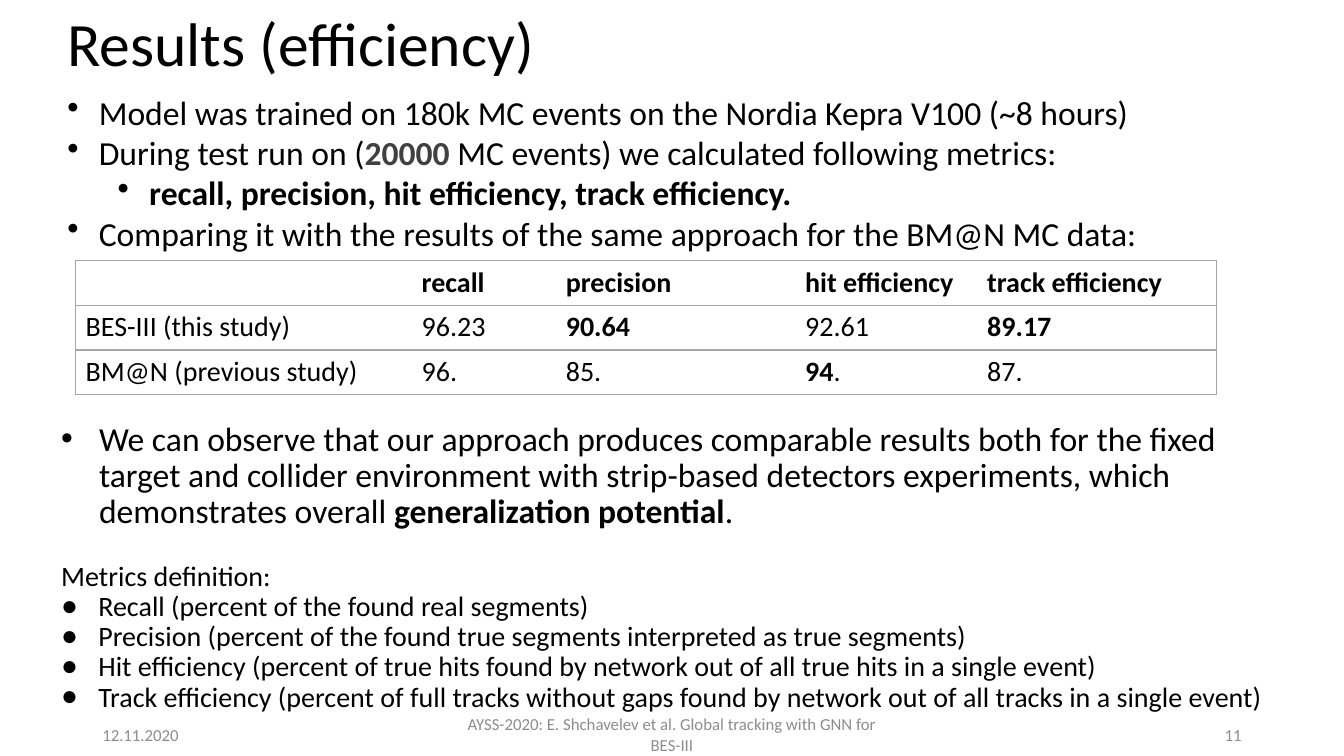
from pptx import Presentation
from pptx.dml.color import RGBColor
from pptx.enum.text import MSO_ANCHOR as Anchor, MSO_AUTO_SIZE as AutoSize, PP_ALIGN as Align
from pptx.oxml.ns import qn
from pptx.util import Pt
from lxml.etree import SubElement

BLACK, DARK, GRAY, LINE, WHITE = "000000", "404040", "8C8C8C", "A5A5A5", "FFFFFF"

METRICS = [
    "Recall (percent of the found real segments)",
    "Precision (percent of the found true segments interpreted as true segments)",
    "Hit efficiency (percent of true hits found by network out of all true hits in a single event)",
    "Track efficiency (percent of full tracks without gaps found by network out of all tracks in a single event)",
]
# A cell is its text, or a list of (text, bold) runs.
RESULTS = [
    ["", [("recall", True)], [("precision", True)], [("hit efficiency", True)],
     [("track efficiency", True)]],
    ["BES-III (this study)", "96.23", [("90.64", True)], "92.61", [("89.17", True)]],
    ["BM@N (previous study)", "96.", "85.", [("94", True), (".", False)], "87."],
]
COLUMNS = [240, 103, 171, 130, 171]
ROW_HEIGHT = 32


def rgb(value):
    return RGBColor.from_string(value)


def add_run(p, text, size=24, color=BLACK, bold=False):
    r = p.add_run()
    r.text = text
    r.font.name = "Calibri"
    r.font.size = Pt(size)
    r.font.bold = bold
    r.font.color.rgb = rgb(color)


def set_bullet(p, char, left, hang):
    """Indent the paragraph and give it a bullet, or none if char is empty."""
    pPr = p._p.get_or_add_pPr()
    pPr.set("marL", str(Pt(left)))
    pPr.set("indent", str(Pt(-hang)))
    if char:
        SubElement(pPr, qn("a:buChar")).set("char", char)
    else:
        SubElement(pPr, qn("a:buNone"))


def add_paragraph(tf, text="", bullet="", left=0, hang=0, spacing=1.0, before=0,
                  level=0, align=Align.LEFT, **font):
    first = tf.paragraphs[0]
    p = tf.add_paragraph() if first.runs else first
    p.level = level
    set_bullet(p, bullet, left, hang)
    p.line_spacing = spacing
    p.space_before = Pt(before)
    p.space_after = Pt(0)
    p.alignment = align
    if text:
        add_run(p, text, **font)
    return p


def place(sp, left, top, width, height, anchor=Anchor.TOP):
    sp.left, sp.top, sp.width, sp.height = Pt(left), Pt(top), Pt(width), Pt(height)
    tf = sp.text_frame
    tf.word_wrap = True
    tf.auto_size = AutoSize.NONE
    tf.vertical_anchor = anchor
    return tf


def add_text_box(s, left, top, width, height, anchor=Anchor.TOP):
    return place(s.shapes.add_textbox(0, 0, 0, 0), left, top, width, height, anchor)


def add_setup(s):
    tf = add_text_box(s, 41, 62, 852, 124)
    item = {"bullet": "•", "left": 22.5, "hang": 22.5}
    add_paragraph(tf, "Model was trained on 180k MC events on the Nordia Kepra V100 (~8 hours)", **item)
    p = add_paragraph(tf, "During test run on (", **item)
    add_run(p, "20000", color=DARK, bold=True)
    add_run(p, " MC events) we calculated following metrics:")
    add_paragraph(tf, "recall, precision, hit efficiency, track efficiency.",
                  bullet="•", left=58.5, hang=22.5, level=1, bold=True)
    add_paragraph(tf, "Comparing it with the results of the same approach for the BM@N MC data:", **item)


def set_border(cell, side, color=None):
    ln = SubElement(cell._tc.get_or_add_tcPr(), qn(f"a:ln{side}"), w=str(Pt(1)))
    if color:
        fill = SubElement(ln, qn("a:solidFill"))
        SubElement(fill, qn("a:srgbClr"), val=color)
    else:
        SubElement(ln, qn("a:noFill"))


def add_results_table(s):
    last = len(COLUMNS) - 1
    table = s.shapes.add_table(len(RESULTS), len(COLUMNS), Pt(54), Pt(186),
                               Pt(sum(COLUMNS)), Pt(ROW_HEIGHT * len(RESULTS))).table
    table.first_row = table.horz_banding = False
    for column, width in zip(table.columns, COLUMNS):
        column.width = Pt(width)
    for i, row in enumerate(RESULTS):
        table.rows[i].height = Pt(ROW_HEIGHT)
        for j, content in enumerate(row):
            cell = table.cell(i, j)
            set_border(cell, "L", LINE if j == 0 else None)
            set_border(cell, "R", LINE if j == last else None)
            set_border(cell, "T", LINE)
            set_border(cell, "B", LINE)
            cell.fill.solid()
            cell.fill.fore_color.rgb = rgb(WHITE)
            runs = [(content, False)] if isinstance(content, str) else content
            for text, bold in runs:
                if text:
                    add_run(cell.text_frame.paragraphs[0], text, size=20, bold=bold)


def fill_conclusions(sp):
    tf = place(sp, 27, 298, 883, 187)
    p = add_paragraph(tf, "We can observe that our approach produces comparable results both for the "
                      "fixed target and collider environment with strip-based detectors experiments, "
                      "which demonstrates overall ", bullet="•", left=36.5, hang=27, spacing=0.9)
    add_run(p, "generalization potential", bold=True)
    add_run(p, ".")
    add_paragraph(tf, "Metrics definition:", left=9.5, spacing=0.9, before=22, size=20)
    for metric in METRICS:
        add_paragraph(tf, metric, bullet="●", left=36, hang=26.5, spacing=0.9, size=20)


def add_footer(s, text, left, width, align):
    tf = add_text_box(s, left, 510, width, 29, Anchor.MIDDLE)
    add_paragraph(tf, text, align=align, size=12, color=GRAY)


def main():
    prs = Presentation()
    prs.slide_width, prs.slide_height = Pt(960), Pt(540)
    s = prs.slides.add_slide(prs.slide_layouts[1])
    title = place(s.shapes.title, 41, -19, 828, 104.5, Anchor.MIDDLE)
    add_paragraph(title, "Results (efficiency)", spacing=0.9, size=44)
    fill_conclusions(s.placeholders[1])
    add_footer(s, "12.11.2020", 66, 216, Align.LEFT)
    add_footer(s, "AYSS-2020: E. Shchavelev et al. Global tracking with GNN for BES-III",
               318, 324, Align.CENTER)
    add_footer(s, "11", 678, 216, Align.RIGHT)
    add_results_table(s)
    add_setup(s)
    prs.save("out.pptx")


if __name__ == "__main__":
    main()
